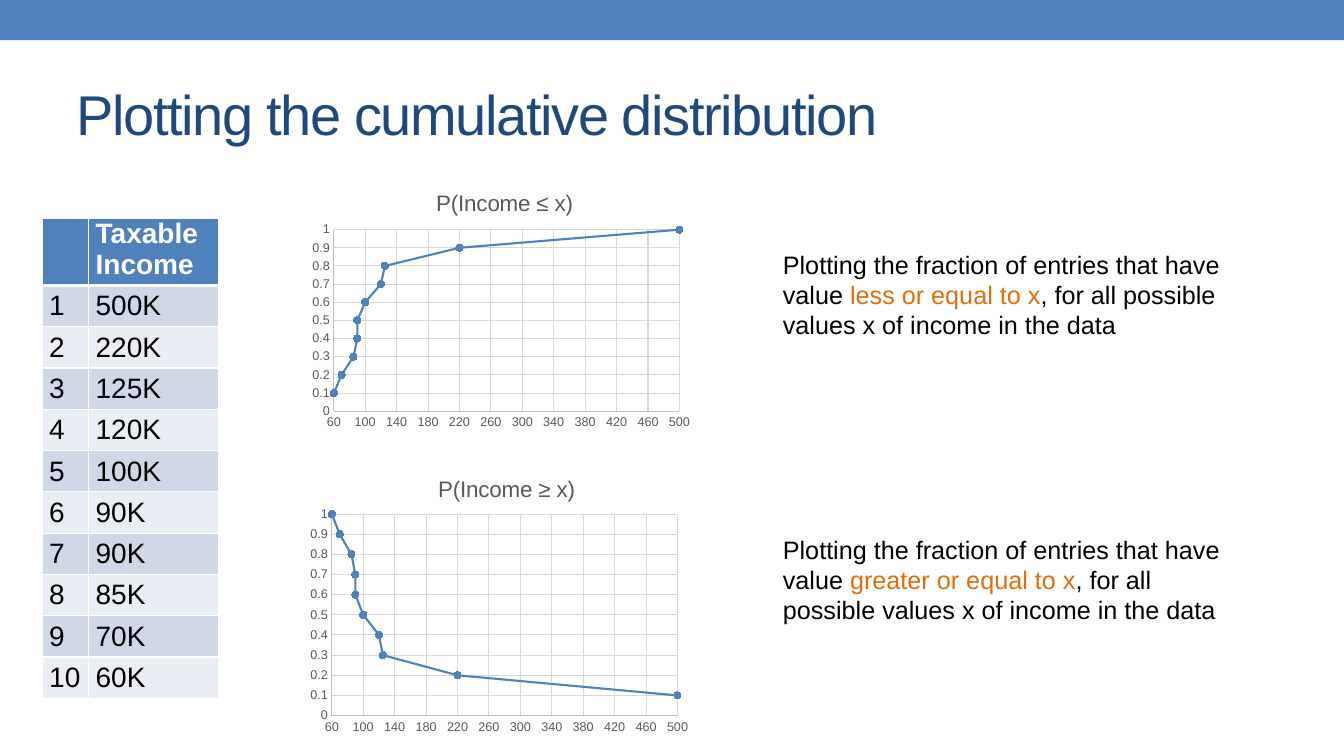
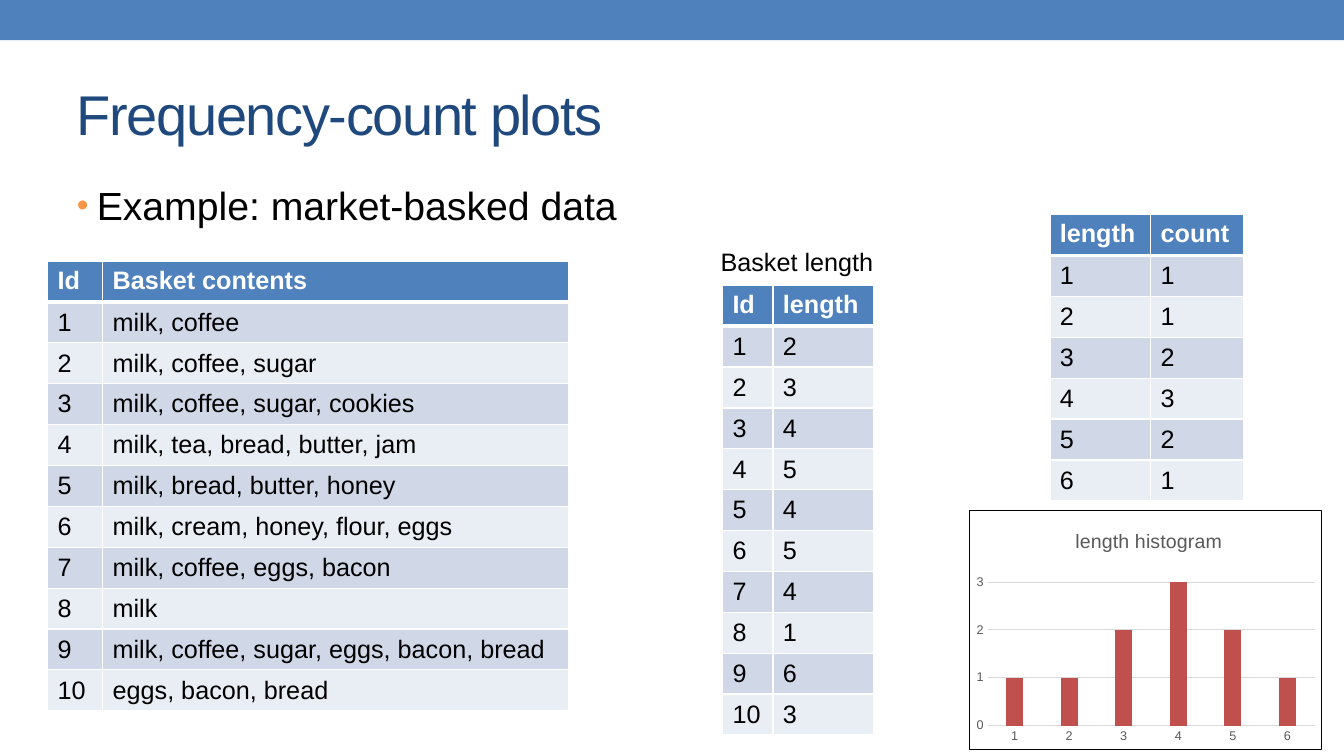
import pptx
import pptx.chart.data
import pptx.dml.color
import pptx.enum.chart
import pptx.enum.shapes
import pptx.enum.text
import pptx.oxml
import pptx.oxml.ns
import pptx.util
from lxml import etree

Cm = pptx.util.Cm
Pt = pptx.util.Pt
qn = pptx.oxml.ns.qn
ChartType = pptx.enum.chart.XL_CHART_TYPE
Anchor = pptx.enum.text.MSO_ANCHOR

COLORS = {
    "band": "4F81BD",
    "title": "1F497D",
    "text": "000000",
    "white": "FFFFFF",
    "row_odd": "D0D8E8",
    "row_even": "E9EDF4",
    "highlight": "E46C0A",
    "bullet": "F79646",
    "bars": "C0504D",
    "label": "595959",
    "axis": "BFBFBF",
    "grid": "D9D9D9",
}
FONT = "Arial"
SLIDE_WIDTH, SLIDE_HEIGHT = 33.87, 19.05

INCOMES = [500, 220, 125, 120, 100, 90, 90, 85, 70, 60]
BASKETS = [
    "milk, coffee",
    "milk, coffee, sugar",
    "milk, coffee, sugar, cookies",
    "milk, tea, bread, butter, jam",
    "milk, bread, butter, honey",
    "milk, cream, honey, flour, eggs",
    "milk, coffee, eggs, bacon",
    "milk",
    "milk, coffee, sugar, eggs, bacon, bread",
    "eggs, bacon, bread",
]
BASKET_LENGTHS = [2, 3, 4, 5, 4, 5, 4, 1, 6, 3]
LENGTH_COUNTS = [1, 1, 2, 3, 2, 1]


def rgb(name):
    return pptx.dml.color.RGBColor.from_string(COLORS[name])


def style_font(font, size, color, bold=False):
    font.name = FONT
    font.size = Pt(size)
    font.bold = bold
    font.color.rgb = rgb(color)


def style_line(line, color, width=0.75):
    line.color.rgb = rgb(color)
    line.width = Pt(width)


def add_run(paragraph, text, size, color="text", bold=False):
    run = paragraph.add_run()
    run.text = text
    style_font(run.font, size, color, bold)
    return run


def add_text(slide, box, runs, size, wrap=True, anchor=Anchor.TOP):
    frame = slide.shapes.add_textbox(*map(Cm, box)).text_frame
    frame.word_wrap = wrap
    frame.vertical_anchor = anchor
    paragraph = frame.paragraphs[0]
    for text, color in runs:
        add_run(paragraph, text, size, color)
    return paragraph


def add_bullet(slide, box, text, size):
    paragraph = add_text(slide, box, [(text, "text")], size)
    properties = paragraph._p.get_or_add_pPr()
    properties.set("marL", str(Cm(0.5)))
    properties.set("indent", str(-Cm(0.5)))
    color = etree.SubElement(properties, qn("a:buClr"))
    etree.SubElement(color, qn("a:srgbClr"), val=COLORS["bullet"])
    etree.SubElement(properties, qn("a:buSzPct"), val="85000")
    etree.SubElement(properties, qn("a:buFont"), typeface=FONT)
    etree.SubElement(properties, qn("a:buChar"), char="•")


def add_titled_slide(deck, title):
    slide = deck.slides.add_slide(deck.slide_layouts[6])
    band = slide.shapes.add_shape(
        pptx.enum.shapes.MSO_SHAPE.RECTANGLE, 0, 0, Cm(SLIDE_WIDTH), Cm(1.01))
    band.shadow.inherit = False
    band.fill.solid()
    band.fill.fore_color.rgb = rgb("band")
    band.line.fill.background()
    heading = add_text(slide, (1.69, 1.48, 30.48, 2.75), [(title, "title")], 40,
                       anchor=Anchor.MIDDLE)
    heading.runs[0]._r.get_or_add_rPr().set("spc", "-100")
    return slide


def add_solid_line(parent, tag, color, width):
    line = etree.SubElement(parent, qn(tag), w=str(Pt(width)))
    fill = etree.SubElement(line, qn("a:solidFill"))
    etree.SubElement(fill, qn("a:srgbClr"), val=COLORS[color])


def style_cell(cell, row):
    top = 3 if row == 1 else 1
    bottom = 3 if row == 0 else 1
    properties = cell._tc.get_or_add_tcPr()
    for side, width in zip("LRTB", (1, 1, top, bottom)):
        add_solid_line(properties, f"a:ln{side}", "white", width)
    cell.fill.solid()
    cell.fill.fore_color.rgb = rgb("band" if row == 0 else "row_odd" if row % 2 else "row_even")
    cell.vertical_anchor = Anchor.MIDDLE if row else Anchor.TOP


def add_data_table(slide, left, top, widths, rows, size=18, row_height=1.03,
                   header_height=1.03, margins=(0.25, 0.13)):
    heights = [header_height] + [row_height] * (len(rows) - 1)
    table = slide.shapes.add_table(
        len(rows), len(widths), Cm(left), Cm(top), Cm(sum(widths)), Cm(sum(heights))).table
    table.horz_banding = False
    for column, width in zip(table.columns, widths):
        column.width = Cm(width)
    for row, (values, height) in enumerate(zip(rows, heights)):
        table.rows[row].height = Cm(height)
        for column, value in enumerate(values):
            cell = table.cell(row, column)
            style_cell(cell, row)
            cell.margin_left = cell.margin_right = Cm(margins[0])
            cell.margin_top = cell.margin_bottom = Cm(margins[1])
            frame = cell.text_frame
            for index, line in enumerate(str(value).splitlines()):
                paragraph = frame.add_paragraph() if index else frame.paragraphs[0]
                add_run(paragraph, line, size, "text" if row else "white", row == 0)


def set_layout(parent, index, **position):
    for layout in parent.findall(qn("c:layout")):
        parent.remove(layout)
    layout = etree.Element(qn("c:layout"))
    parent.insert(index, layout)
    manual = etree.SubElement(layout, qn("c:manualLayout"))
    if "w" in position:
        etree.SubElement(manual, qn("c:layoutTarget"), val="inner")
    for mode in ("xMode", "yMode"):
        etree.SubElement(manual, qn(f"c:{mode}"), val="edge")
    for key, value in position.items():
        etree.SubElement(manual, qn(f"c:{key}"), val=str(value))


def set_chart_border(chart, color):
    frame = etree.Element(qn("c:spPr"))
    etree.SubElement(frame, qn("a:noFill"))
    if color:
        add_solid_line(frame, "a:ln", color, 0.75)
    else:
        etree.SubElement(etree.SubElement(frame, qn("a:ln")), qn("a:noFill"))
    chart._chartSpace.find(qn("c:txPr")).addprevious(frame)


def style_axis(axis, line_color, grid, scale=None):
    axis.major_tick_mark = axis.minor_tick_mark = pptx.enum.chart.XL_TICK_MARK.NONE
    style_font(axis.tick_labels.font, 9, "label")
    if line_color:
        style_line(axis.format.line, line_color)
    else:
        axis.format.line.fill.background()
    axis.has_major_gridlines = grid
    if grid:
        style_line(axis.major_gridlines.format.line, "grid")
    if scale:
        axis.minimum_scale, axis.maximum_scale, axis.major_unit = scale


def add_titled_chart(slide, kind, box, data, title, title_size, title_left, plot, border=None):
    chart = slide.shapes.add_chart(kind, *map(Cm, box), data).chart
    style_font(chart.font, 10, "text")
    chart.has_legend = False
    chart.has_title = True
    add_run(chart.chart_title.text_frame.paragraphs[0], title, title_size, "label")
    chart.chart_title.include_in_layout = False
    set_layout(chart.chart_title._element, 1, x=title_left, y=0.06)
    set_layout(chart._chartSpace.chart.plotArea, 0, **dict(zip("xywh", plot)))
    set_chart_border(chart, border)
    chart.plots[0].vary_by_categories = False
    return chart


def add_cumulative_chart(slide, box, title, points, plot):
    data = pptx.chart.data.XyChartData()
    curve = data.add_series("Series 1")
    for income, fraction in points:
        curve.add_data_point(income, fraction)
    chart = add_titled_chart(slide, ChartType.XY_SCATTER_LINES, box, data, title, 16, 0.33, plot)
    style_axis(chart.category_axis, "axis", True, (60, 500, 40))
    style_axis(chart.value_axis, "axis", True, (0, 1, 0.1))
    series = chart.plots[0].series[0]
    series.smooth = False
    style_line(series.format.line, "band", 1.5)
    marker = series.marker
    marker.style = pptx.enum.chart.XL_MARKER_STYLE.CIRCLE
    marker.size = 5
    marker.format.fill.solid()
    marker.format.fill.fore_color.rgb = rgb("band")
    style_line(marker.format.line, "band")


def add_histogram(slide, box, title, counts):
    data = pptx.chart.data.CategoryChartData()
    data.categories = [str(length) for length in range(1, len(counts) + 1)]
    data.add_series("Series 1", counts)
    chart = add_titled_chart(slide, ChartType.COLUMN_CLUSTERED, box, data, title, 14, 0.29,
                             (0.05, 0.2, 0.93, 0.7), "text")
    style_axis(chart.category_axis, "grid", False)
    style_axis(chart.value_axis, None, True, (0, 3.5, 1))
    bars = chart.plots[0]
    bars.gap_width, bars.overlap = 219, -27
    bars.series[0].format.fill.solid()
    bars.series[0].format.fill.fore_color.rgb = rgb("bars")


def build_cumulative_slide(deck):
    slide = add_titled_slide(deck, "Plotting the cumulative distribution")
    rows = [("", "Taxable\nIncome")]
    rows += [(rank, f"{income}K") for rank, income in enumerate(INCOMES, 1)]
    add_data_table(slide, 1.06, 5.5, (1.17, 3.27), rows, 20, 1.04, 1.69, (0.18, 0))
    ascending = INCOMES[::-1]
    rising = [step / 10 for step in range(1, 11)]
    panels = [
        ("≤", "less", rising, (7.62, 4.24, 9.9, 6.73), (0.08, 0.23, 0.88, 0.68), 6.15),
        ("≥", "greater", rising[::-1], (7.67, 11.43, 9.9, 7.26), (0.07, 0.21, 0.88, 0.7), 13.34),
    ]
    for sign, word, fractions, box, plot, text_top in panels:
        add_cumulative_chart(slide, box, f"P(Income {sign} x)", zip(ascending, fractions), plot)
        add_text(slide, (19.48, text_top, 11.85, 2.56), [
            ("Plotting the fraction of entries that have value ", "text"),
            (f"{word} or equal to x", "highlight"),
            (", for all possible values x of income in the data", "text"),
        ], 18)


def build_frequency_slide(deck):
    slide = add_titled_slide(deck, "Frequency-count plots")
    add_bullet(slide, (1.69, 4.45, 30.48, 1.5), "Example: market-basked data", 28)
    add_text(slide, (17.91, 6.07, 4.4, 1.02), [("Basket length", "text")], 18, wrap=False)
    tables = [
        (1.2, 6.58, (1.39, 11.74), ("Id", "Basket contents"), BASKETS),
        (18.21, 7.19, (1.27, 2.54), ("Id", "length"), BASKET_LENGTHS),
        (26.46, 5.41, (2.54, 2.34), ("length", "count"), LENGTH_COUNTS),
    ]
    for left, top, widths, header, values in tables:
        add_data_table(slide, left, top, widths, [header, *enumerate(values, 1)])
    add_histogram(slide, (24.43, 12.85, 8.89, 6.05), "length histogram", LENGTH_COUNTS)


def main():
    deck = pptx.Presentation()
    deck.slide_width, deck.slide_height = Cm(SLIDE_WIDTH), Cm(SLIDE_HEIGHT)
    build_cumulative_slide(deck)
    build_frequency_slide(deck)
    deck.save("out.pptx")


if __name__ == "__main__":
    main()
